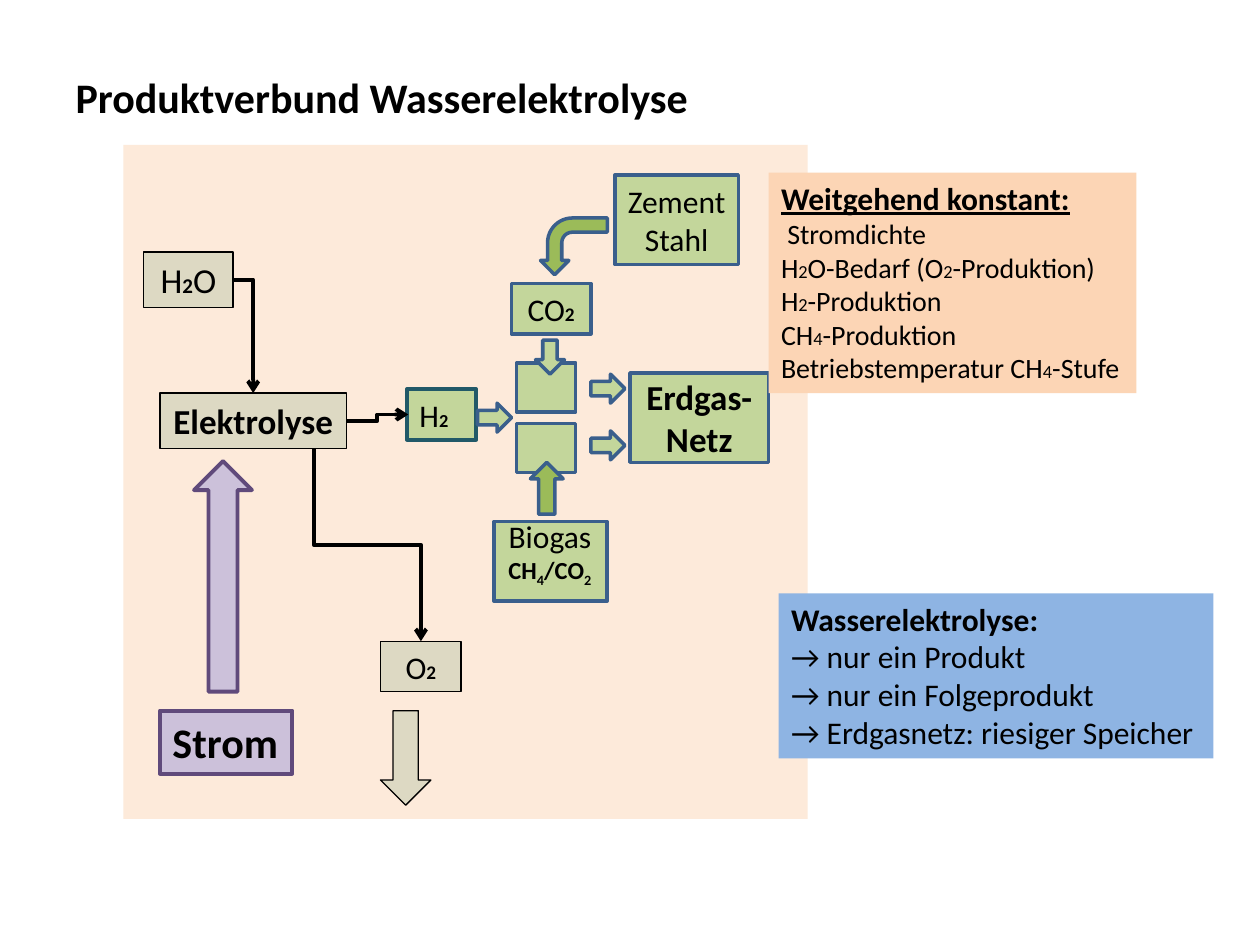
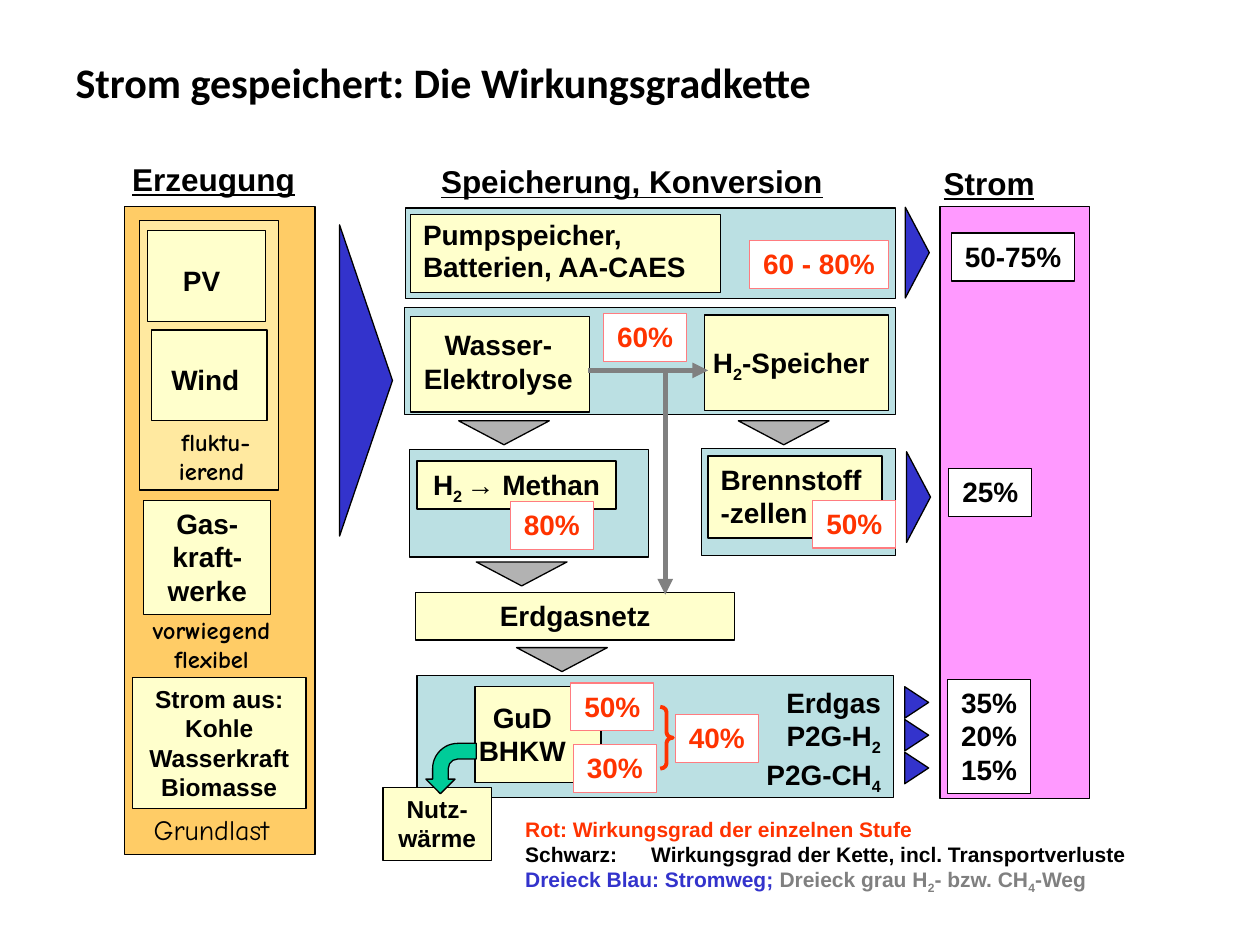
from lxml.etree import SubElement
from pptx import Presentation
from pptx.dml.color import RGBColor
from pptx.enum.shapes import MSO_CONNECTOR, MSO_SHAPE
from pptx.enum.text import MSO_ANCHOR, PP_ALIGN
from pptx.oxml.ns import qn
from pptx.util import Inches, Pt

BLACK = RGBColor(0x00, 0x00, 0x00)
WHITE = RGBColor(0xFF, 0xFF, 0xFF)
PEACH = RGBColor(0xFD, 0xEA, 0xDA)
APRICOT = RGBColor(0xFC, 0xD5, 0xB5)
SKY = RGBColor(0x8E, 0xB4, 0xE3)
SAND = RGBColor(0xDD, 0xD9, 0xC3)
GREEN = RGBColor(0xC3, 0xD6, 0x9B)
DEEP_GREEN = RGBColor(0x9B, 0xBB, 0x59)
STEEL = RGBColor(0x3A, 0x5F, 0x8C)
TEAL = RGBColor(0x21, 0x59, 0x68)
LILAC = RGBColor(0xCC, 0xC1, 0xDA)
PURPLE = RGBColor(0x60, 0x4A, 0x7B)
AQUA = RGBColor(0xBB, 0xE0, 0xE3)
CREAM = RGBColor(0xFF, 0xFF, 0xCC)
ORANGE = RGBColor(0xFF, 0xCC, 0x66)
PINK = RGBColor(0xFF, 0x99, 0xFF)
BLUE = RGBColor(0x33, 0x33, 0xCC)
SILVER = RGBColor(0xB2, 0xB2, 0xB2)
GRAY = RGBColor(0x80, 0x80, 0x80)
RED = RGBColor(0xFF, 0x33, 0x00)
ROSE = RGBColor(0xFF, 0x7C, 0x80)
MINT = RGBColor(0x00, 0xCC, 0x99)

COLUMNS, ROWS = 10, 7.5
SLIDE_WIDTH, SLIDE_HEIGHT = Inches(COLUMNS), Inches(ROWS)
LEFT, CENTER, RIGHT = PP_ALIGN.LEFT, PP_ALIGN.CENTER, PP_ALIGN.RIGHT
TOP, MIDDLE = MSO_ANCHOR.TOP, MSO_ANCHOR.MIDDLE
QUARTER_TURN = 90 * 60000
LOWERED = {"baseline": "-25000"}
BASE = {
    "preset": MSO_SHAPE.RECTANGLE, "fill": None, "alpha": None, "line": None,
    "weight": 0.75, "turn": {}, "adjust": (), "align": LEFT, "spacing": None,
    "frame": {"word_wrap": True, "vertical_anchor": TOP},
    "font": {"name": "Calibri", "size": Pt(18), "bold": False, "color": BLACK},
    "sub": LOWERED,
}
ONE_LINE = {"word_wrap": False, "vertical_anchor": TOP}
CENTERED = {"word_wrap": True, "vertical_anchor": MIDDLE}


def font(size, name="Arial", bold=True, **more):
    return {"name": name, "size": Pt(size), "bold": bold, "color": BLACK, **more}


def style(parent=BASE, **changes):
    return {**parent, **changes}


def small(size, bold):
    return {"size": Pt(size), "bold": bold}


FIELD = style(fill=PEACH)
SOURCE = style(fill=SAND, line=BLACK, frame=ONE_LINE, align=CENTER, sub=small(11, True))
WATER = style(SOURCE, font=font(20, "Calibri", False), sub=small(12, True))
ELECTROLYSIS = style(SOURCE, font=font(20, "Calibri"))
GAS = style(fill=GREEN, line=STEEL, weight=2, align=CENTER, frame=CENTERED, sub=small(11, True))
HYDROGEN = style(GAS, line=TEAL, weight=2.25, align=LEFT,
                 frame=BASE["frame"], sub=small(10.5, True))
GRID = style(GAS, font=font(20, "Calibri"))
STEP = style(GAS, preset=MSO_SHAPE.RIGHT_ARROW)
STEP_DOWN = style(STEP, turn={"rot": QUARTER_TURN})
BEND = {"preset": MSO_SHAPE.BENT_ARROW, "turn": {"rot": 3 * QUARTER_TURN, "flipH": 1}}
CO2_FEED = style(GAS, fill=DEEP_GREEN, **BEND)
BIOGAS_FEED = style(GAS, fill=DEEP_GREEN, preset=MSO_SHAPE.UP_ARROW)
BIOGAS = style(preset=None, align=CENTER, frame=CENTERED)
OXYGEN_OUT = style(SOURCE, preset=MSO_SHAPE.DOWN_ARROW)
POWER = style(fill=LILAC, line=PURPLE, weight=2.25, frame=ONE_LINE, font=font(24, "Calibri"))
POWER_IN = style(POWER, preset=MSO_SHAPE.UP_ARROW)
CONSTANTS = style(fill=APRICOT, frame=ONE_LINE, font=font(16, "Calibri", False),
                  sub=small(10.5, False))
SUMMARY = style(fill=SKY, frame=ONE_LINE)

PANEL = style(fill=AQUA, line=BLACK)
GENERATION = style(PANEL, fill=ORANGE)
VOLATILE = style(PANEL, fill=CREAM, alpha=57)
OUTPUT = style(PANEL, fill=PINK)
PLANT = style(PANEL, fill=CREAM, align=CENTER, font=font(16))
PLANT_LEFT = style(PLANT, align=LEFT)
PLANT_TIGHT = style(PLANT_LEFT, spacing=0.95)
PLANT_SMALL = style(PLANT, font=font(14))
METHANE = style(PLANT, frame=ONE_LINE)
LABEL = style(METHANE, preset=None)
LABEL_RIGHT = style(LABEL, align=RIGHT)
HEADING = style(LABEL, font=font(18, underline=True))
NOTE = style(preset=None, align=CENTER, font=font(14, "Comic Neue"))
BASE_LOAD = style(preset=None, font=font(16, "Comic Neue", False))
LEGEND = style(preset=None, font=font(12))
CHAIN_RATE = style(METHANE, fill=WHITE)
STAGE_RATE = style(CHAIN_RATE, line=ROSE, font=font(16, color=RED))
POWER_PATH = style(PANEL, fill=BLUE, preset=MSO_SHAPE.ISOSCELES_TRIANGLE,
                   turn={"rot": QUARTER_TURN})
GAS_PATH = style(POWER_PATH, fill=SILVER, turn={"rot": 2 * QUARTER_TURN})
HEAT = style(PANEL, fill=MINT, adjust=(0.31, 0.29, 0.29, 0.5), **BEND)
BRACE = style(preset=MSO_SHAPE.RIGHT_BRACE, line=RED, weight=2.25, adjust=(0.417, 0.5))

ARROW = {"color": BLACK, "weight": 2.25, "head": "arrow"}
FLOW = {"color": GRAY, "weight": 3, "head": "triangle"}
BOLD_HEAD = {"size": Pt(18), "bold": True}

ELECTROLYSIS_SLIDE = {
    "title": ("Produktverbund Wasserelektrolyse", 0.3),
    "parts": [
        (FIELD, (0.98, 1.15, 5.43, 5.35)),
        (SOURCE, (3.02, 5.09, 0.64, 0.4), "O|2|"),
        (HYDROGEN, (3.23, 3.09, 0.55, 0.4), "H|2|"),
        *[(GAS, (4.1, y, 0.47, 0.39)) for y in (2.88, 3.36)],
        *[(STEP, (x, y, 0.27, 0.23)) for x, y in ((3.79, 3.2), (4.69, 2.97), (4.69, 3.42))],
        (ELECTROLYSIS, (1.27, 3.12, 1.48, 0.44), "Elektrolyse"),
        (OXYGEN_OUT, (3.02, 5.64, 0.4, 0.75)),
        (GAS, (4.88, 1.39, 0.98, 0.71), "Zement", "Stahl"),
        (GAS, (4.06, 2.25, 0.63, 0.4), "CO|2|"),
        (CO2_FEED, (4.33, 1.69, 0.45, 0.53)),
        (BIOGAS_FEED, (4.21, 3.67, 0.26, 0.41)),
        (GRID, (5, 2.96, 1.1, 0.71), "Erdgas-Netz"),
        (POWER_IN, (1.54, 3.66, 0.46, 1.83)),
        (POWER, (1.27, 5.64, 1.05, 0.5), "Strom"),
        (CONSTANTS, (6.1, 1.37, 2.92, 1.75),
         [("Weitgehend konstant:", {**BOLD_HEAD, "underline": True})],
         " Stromdichte", "H|2|O-Bedarf (O|2|-Produktion)", "H|2|-Produktion",
         "CH|4|-Produktion", "Betriebstemperatur CH|4|-Stufe"),
        (WATER, (1.14, 2, 0.71, 0.44), "H|2|O"),
        (SUMMARY, (6.18, 4.71, 3.45, 1.31),
         [("Wasserelektrolyse:", BOLD_HEAD)], "→ nur ein Produkt",
         "→ nur ein Folgeprodukt", "→ Erdgasnetz: riesiger Speicher"),
        (GAS, (3.92, 4.14, 0.9, 0.63)),
        (BIOGAS, (3.73, 4, 1.27, 0.77), "Biogas",
         [("CH|4|/CO|2|", {"size": Pt(14), "bold": True})]),
        (STEP_DOWN, (4.23, 2.72, 0.27, 0.23)),
    ],
    "links": [
        (ARROW, "bentConnector3", (2.15, 3.9, 1.53, 0.85), {"rot": 3 * QUARTER_TURN, "flipH": 1}),
        (ARROW, "bentConnector3", (2.75, 3.29, 0.49, 0.05), {"flipV": 1}),
        (ARROW, "bentConnector2", (1.85, 2.22, 0.16, 0.9), {}),
    ],
}

EFFICIENCY_SLIDE = {
    "title": ("Strom gespeichert: Die Wirkungsgradkette", 0.18),
    "parts": [
        *[(PANEL, box) for box in (
            (3.25, 3.57, 1.9, 0.85), (5.57, 3.56, 1.54, 0.85), (3.31, 5.36, 3.78, 0.97),
            (3.22, 1.65, 3.89, 0.72), (3.21, 2.44, 3.9, 0.85))],
        (GENERATION, (0.99, 1.64, 1.51, 5.14)),
        (VOLATILE, (1.11, 1.75, 1.1, 2.14)),
        (OUTPUT, (7.46, 1.64, 1.19, 4.7)),
        (PLANT, (5.59, 2.5, 1.46, 0.76)),
        (LABEL, (5.55, 2.69, 1.46, 0.37), "H|2|-Speicher"),
        (PLANT, (1.17, 1.83, 0.94, 0.72)),
        (LABEL, (1.35, 2.04, 0.5, 0.37), "PV"),
        (PLANT, (1.2, 2.62, 0.92, 0.72)),
        (LABEL, (1.26, 2.83, 0.74, 0.37), "Wind"),
        (PLANT, (1.14, 3.97, 1.01, 0.91), "Gas-kraft-werke"),
        (PLANT, (3.26, 2.51, 1.42, 0.76)),
        (style(LABEL, frame=BASE["frame"]), (3.21, 2.55, 1.49, 0.64), "Wasser-Elektrolyse"),
        (PLANT, (3.3, 4.7, 2.53, 0.38), "Erdgasnetz"),
        (METHANE, (3.31, 3.66, 1.58, 0.38), "H|2 |→ Methan"),
        (PLANT, (3.77, 5.45, 1, 0.76)),
        (LABEL, (3.7, 5.51, 0.89, 0.64), "GuD", "BHKW"),
        (PLANT_TIGHT, (3.26, 1.7, 2.46, 0.62), "Pumpspeicher,", "Batterien, AA-CAES"),
        (HEADING, (0.95, 1.22, 1.49, 0.4), "Erzeugung"),
        (HEADING, (3.4, 1.24, 3.23, 0.4), "Speicherung, Konversion"),
        (HEADING, (7.39, 1.25, 0.92, 0.4), "Strom"),
        (NOTE, (1.05, 3.34, 1.26, 0.57), " fluktu-ierend"),
        (NOTE, (1.05, 4.83, 1.26, 0.57), "vorwiegend", "flexibel"),
        (BASE_LOAD, (1.12, 6.4, 1.45, 0.37), "Grundlast"),
        (PLANT_SMALL, (1.05, 5.38, 1.38, 1.04), "Strom aus: Kohle", "Wasserkraft", "Biomasse"),
        (PLANT_LEFT, (5.62, 3.62, 1.38, 0.65), "Brennstoff-zellen"),
        (PLANT_SMALL, (3.04, 6.25, 0.86, 0.58), "Nutz-wärme"),
        (HEAT, (3.38, 5.9, 0.4, 0.4)),
        (LABEL_RIGHT, (5.97, 5.39, 1.12, 0.9), "Erdgas", "P2G-H|2|", "P2G-CH|4|"),
        (LEGEND, (4.07, 6.43, 5.84, 0.7),
         [("Rot: Wirkungsgrad der einzelnen Stufe", {"color": RED})],
         "Schwarz: \tWirkungsgrad der Kette, incl. Transportverluste",
         [("Dreieck Blau: Stromweg; ", {"color": BLUE}),
          ("Dreieck grau H|2|- bzw. CH|4|-Weg", {"color": GRAY})]),
        (CHAIN_RATE, (7.55, 1.85, 0.98, 0.38), "50-75%"),
        (CHAIN_RATE, (7.53, 3.72, 0.66, 0.38), "25%"),
        (CHAIN_RATE, (7.52, 5.39, 0.66, 0.91), "35%", "20%", "15%"),
        (STAGE_RATE, (5.95, 1.91, 1.1, 0.38), "60 - 80%"),
        *[(STAGE_RATE, (x, y, 0.66, 0.38), rate) for rate, x, y in (
            ("60%", 4.79, 2.49), ("80%", 4.05, 3.98), ("50%", 6.45, 3.97),
            ("50%", 4.53, 5.42), ("30%", 4.55, 5.91), ("40%", 5.36, 5.67))],
        (BRACE, (5.24, 5.61, 0.1, 0.49)),
        (POWER_PATH, (1.67, 2.81, 2.47, 0.42)),
        *[(POWER_PATH, (x, y, 0.72, 0.19)) for x, y in ((6.92, 1.91), (6.93, 3.85))],
        *[(POWER_PATH, (7.15, 5.48 + 0.26 * row, 0.25, 0.19)) for row in range(3)],
        *[(GAS_PATH, (x, y, 0.72, 0.19)) for x, y in (
            (3.64, 3.34), (5.86, 3.34), (3.78, 4.46), (4.1, 5.14))],
    ],
    "links": [
        (FLOW, "line", (4.67, 2.94, 0.95, 0), {}),
        (FLOW, "line", (5.28, 2.94, 0, 1.78), {}),
    ],
}


def place(box):
    x, y, w, h = box
    return [round(v) for v in (SLIDE_WIDTH * x / COLUMNS, SLIDE_HEIGHT * y / ROWS,
                               SLIDE_WIDTH * w / COLUMNS, SLIDE_HEIGHT * h / ROWS)]


def assign(target, values):
    for key, value in values.items():
        setattr(target, key, value)


def turn(part, values):
    xfrm = part._element.spPr.find(qn("a:xfrm"))
    for key, value in values.items():
        xfrm.set(key, str(value))


def add_run(paragraph, text, values):
    run = paragraph.add_run()
    run.text = text
    special = ("color", "baseline")
    assign(run.font, {k: v for k, v in values.items() if k not in special})
    run.font.color.rgb = values["color"]
    if "baseline" in values:
        run._r.get_or_add_rPr().set("baseline", values["baseline"])


def write(frame, lines, look):
    assign(frame, look["frame"])
    for row, line in enumerate(lines):
        paragraph = frame.add_paragraph() if row else frame.paragraphs[0]
        assign(paragraph, {"alignment": look["align"], "line_spacing": look["spacing"]})
        for text, changes in [(line, {})] if isinstance(line, str) else line:
            for index, piece in enumerate(text.split("|")):
                if piece:
                    lowered = look["sub"] if index % 2 else {}
                    add_run(paragraph, piece, {**look["font"], **changes, **lowered})


def add_part(slide, look, box, *lines):
    if look["preset"] is None:
        write(slide.shapes.add_textbox(*place(box)).text_frame, lines, look)
        return
    part = slide.shapes.add_shape(look["preset"], *place(box))
    part.shadow.inherit = False
    turn(part, look["turn"])
    for index, value in enumerate(look["adjust"]):
        part.adjustments[index] = value
    for paint, color in ((part.fill, look["fill"]), (part.line.fill, look["line"])):
        if color is None:
            paint.background()
        else:
            paint.solid()
            paint.fore_color.rgb = color
    if look["line"] is not None:
        part.line.width = Pt(look["weight"])
    if look["alpha"]:
        tint = part._element.spPr.find(qn("a:solidFill"))[0]
        SubElement(tint, qn("a:alpha")).set("val", str(look["alpha"] * 1000))
    if lines:
        write(part.text_frame, lines, look)


def add_link(slide, look, preset, box, turned):
    x, y, w, h = place(box)
    kind = MSO_CONNECTOR.STRAIGHT if preset == "line" else MSO_CONNECTOR.ELBOW
    link = slide.shapes.add_connector(kind, x, y, x + w, y + h)
    turn(link, turned)
    link.line.color.rgb = look["color"]
    link.line.width = Pt(look["weight"])
    outline = link.line._get_or_add_ln()
    SubElement(outline, qn("a:tailEnd")).set("type", look["head"])
    properties = link._element.spPr
    properties.find(qn("a:prstGeom")).set("prst", preset)
    SubElement(properties, qn("a:effectLst"))


def add_slide(deck, content):
    slide = deck.slides.add_slide(deck.slide_layouts[5])
    heading, top = content["title"]
    title = slide.shapes.title
    assign(title, dict(zip(("left", "top", "width", "height"), place((0.5, top, 9, 0.93)))))
    write(title.text_frame, [heading], style(font=font(24, "Calibri"), frame=CENTERED))
    for part in content["parts"]:
        add_part(slide, *part)
    for link in content["links"]:
        add_link(slide, *link)


def main():
    deck = Presentation()
    assign(deck, {"slide_width": SLIDE_WIDTH, "slide_height": SLIDE_HEIGHT})
    for content in (ELECTROLYSIS_SLIDE, EFFICIENCY_SLIDE):
        add_slide(deck, content)
    deck.save("out.pptx")


if __name__ == "__main__":
    main()
